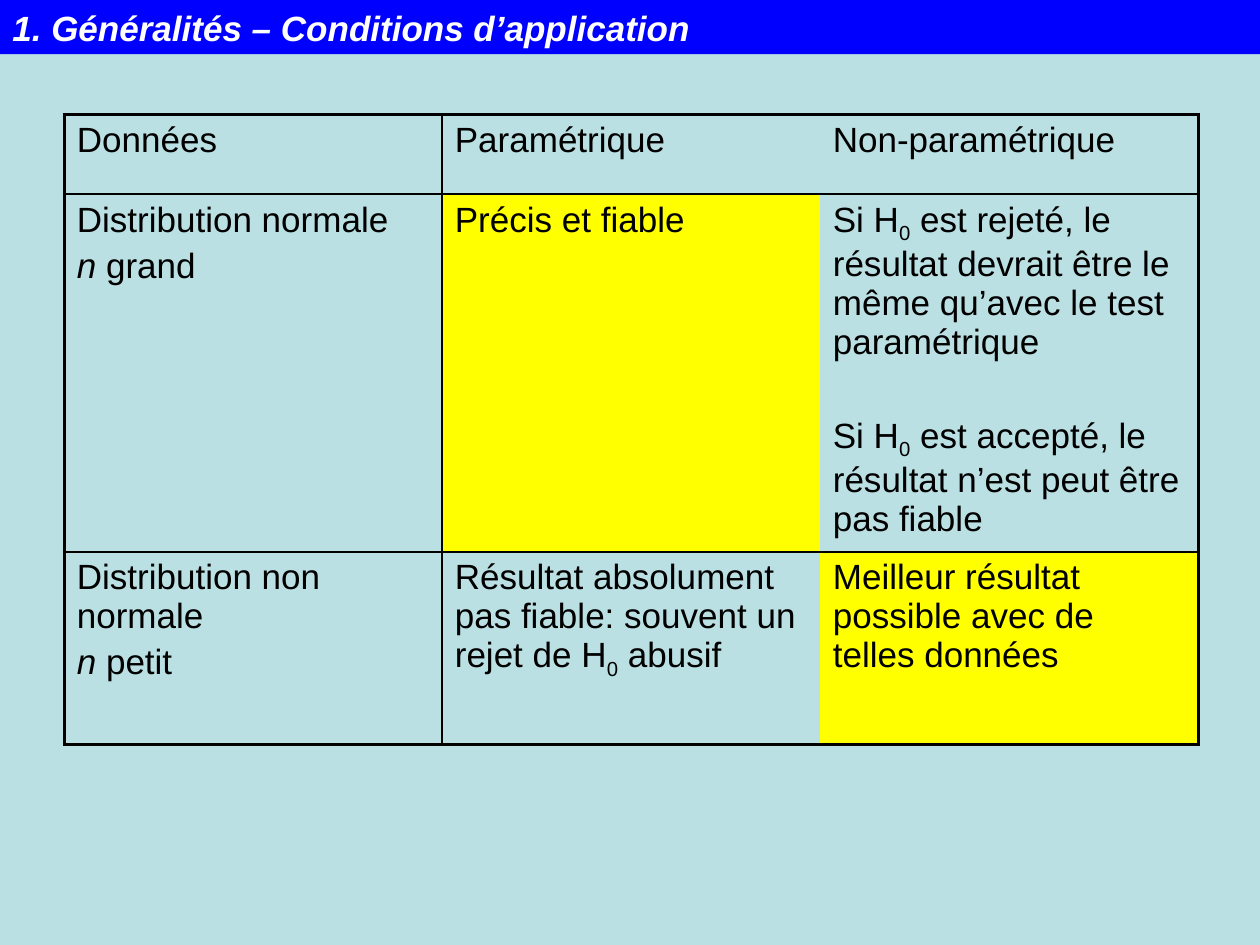
import pptx
import pptx.dml.color
import pptx.enum.shapes
import pptx.enum.text
import pptx.util
from lxml import etree
from pptx.oxml.ns import qn

Inches, Pt = pptx.util.Inches, pptx.util.Pt
Color = pptx.dml.color.RGBColor.from_string


class Theme:
    back, bar, mark = "BBE0E3", "0000FF", "FFFF00"
    ink, light = "000000", "FFFFFF"
    font, size = "Arial", Pt(20)
    gap, wide = Pt(4), Pt(31)
    thick, thin = Pt(2.25), Pt(1)


class Page:
    def __init__(self, deck, theme):
        self.theme = theme
        self.slide = deck.slides.add_slide(deck.slide_layouts[6])
        fill = self.slide.background.fill
        fill.solid()
        fill.fore_color.rgb = Color(theme.back)

    def style(self, para, color, bold=False, italic=False):
        font = para.font
        font.name, font.size = self.theme.font, self.theme.size
        font.bold = bold
        if italic:
            font.italic = True
        font.color.rgb = Color(color)

    def title(self, text):
        bar = self.slide.shapes.add_shape(
            pptx.enum.shapes.MSO_SHAPE.RECTANGLE, 0, 0, Inches(10), Inches(0.43))
        bar.shadow.inherit = False
        bar.fill.solid()
        bar.fill.fore_color.rgb = Color(self.theme.bar)
        bar.line.fill.background()
        para = bar.text_frame.paragraphs[0]
        para.text = text
        para.alignment = pptx.enum.text.PP_ALIGN.LEFT
        self.style(para, self.theme.light, bold=True, italic=True)

    def text(self, cell, paras, gap):
        """Each paragraph is a list of runs: *x is italic, _x is subscript."""
        frame = cell.text_frame
        for i, runs in enumerate(paras):
            para = frame.add_paragraph() if i else frame.paragraphs[0]
            if i:
                para.space_before = gap
            self.style(para, self.theme.ink)
            for part in runs:
                run = para.add_run()
                run.text = part.lstrip("*_")
                if part.startswith("*"):
                    run.font.italic = True
                elif part.startswith("_"):
                    run._r.get_or_add_rPr().set("baseline", "-25000")

    def edge(self, cell, side, width):
        props = cell._tc.get_or_add_tcPr()
        line = etree.SubElement(props, qn("a:ln" + side), w=str(int(width or 0)))
        if width:
            fill = etree.SubElement(line, qn("a:solidFill"))
            etree.SubElement(fill, qn("a:srgbClr"), val=self.theme.ink)
        else:
            etree.SubElement(line, qn("a:noFill"))

    def table(self, rows, heights, width, marks, wide):
        theme = self.theme
        count = len(rows[0])
        table = self.slide.shapes.add_table(
            len(rows), count, Inches(0.51), Inches(0.91),
            Inches(width * count), Inches(sum(heights))).table
        table.first_row = table.horz_banding = False
        for col in table.columns:
            col.width = Inches(width)
        # Rules by position; the two test columns share no rule
        down = [theme.thick, theme.thin, None, theme.thick]
        across = [theme.thick, theme.thin, theme.thin, theme.thick]
        for r, row in enumerate(rows):
            table.rows[r].height = Inches(heights[r])
            for c, paras in enumerate(row):
                cell = table.cell(r, c)
                self.text(cell, paras, theme.wide if (r, c) in wide else theme.gap)
                for side, rule in zip("LRTB", (down[c], down[c + 1],
                                               across[r], across[r + 1])):
                    self.edge(cell, side, rule)
                if (r, c) in marks:
                    cell.fill.solid()
                    cell.fill.fore_color.rgb = Color(theme.mark)
                else:
                    cell.fill.background()


def main():
    deck = pptx.Presentation()
    deck.slide_width, deck.slide_height = Inches(10), Inches(7.5)
    page = Page(deck, Theme)

    # Comparison of the tests
    rows = [
        [[["Données"]], [["Paramétrique"]], [["Non-paramétrique"]]],
        [[["Distribution normale"], ["*n", " grand"]],
         [["Précis et fiable"]],
         [["Si H", "_0", " est rejeté, le résultat devrait être le même "
           "qu’avec le test paramétrique"],
          ["Si H", "_0", " est accepté, le résultat n’est peut être pas fiable"]]],
        [[["Distribution non normale"], ["*n", " petit"]],
         [["Résultat absolument pas fiable: souvent un rejet de H", "_0", " abusif"]],
         [["Meilleur résultat possible avec de telles données"]]],
    ]
    page.table(rows, heights=[0.63, 2.84, 1.53], width=3,
               marks={(1, 1), (2, 2)}, wide={(1, 2)})

    # Heading bar
    page.title("1. Généralités – Conditions d’application")
    deck.save("out.pptx")


if __name__ == "__main__":
    main()
